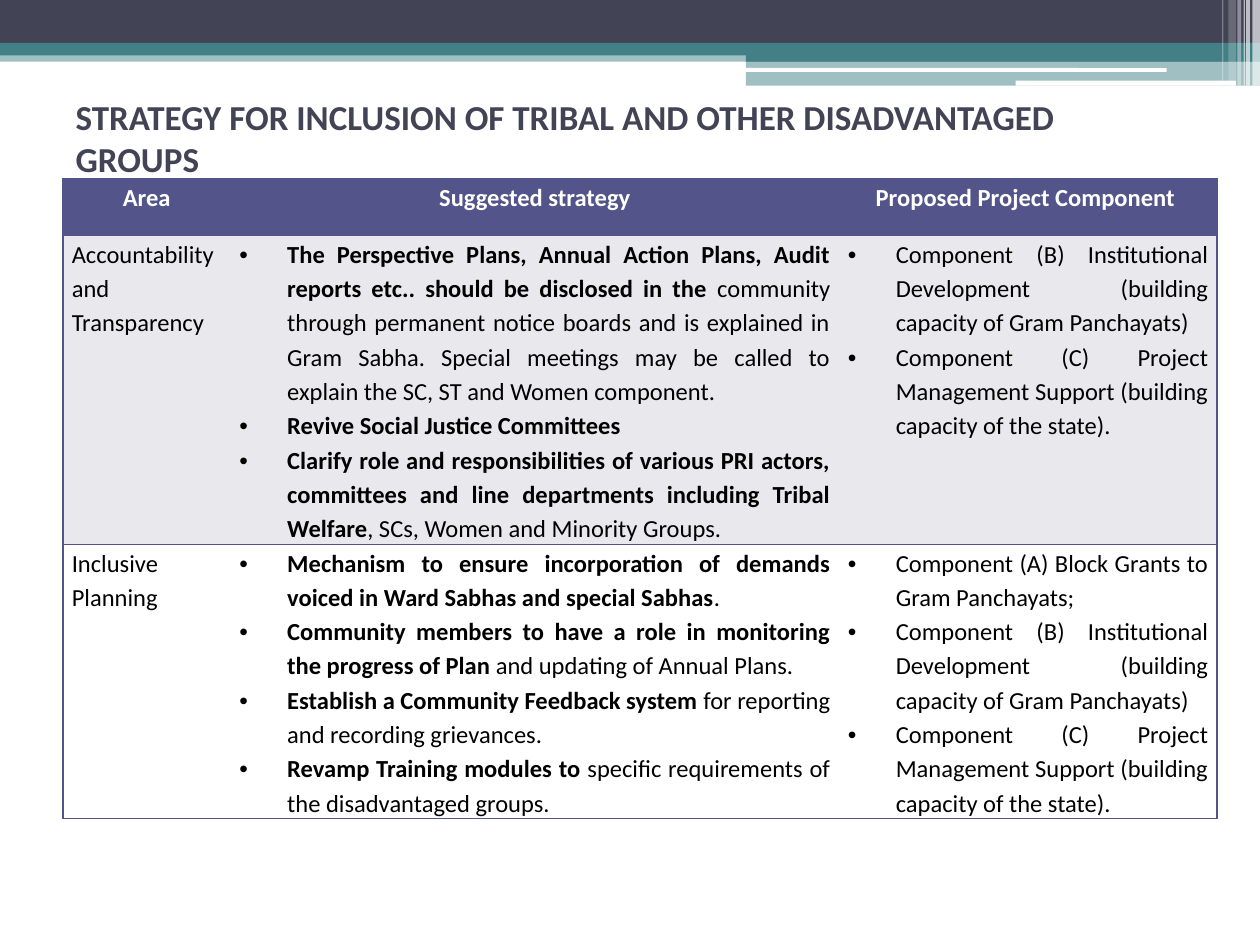
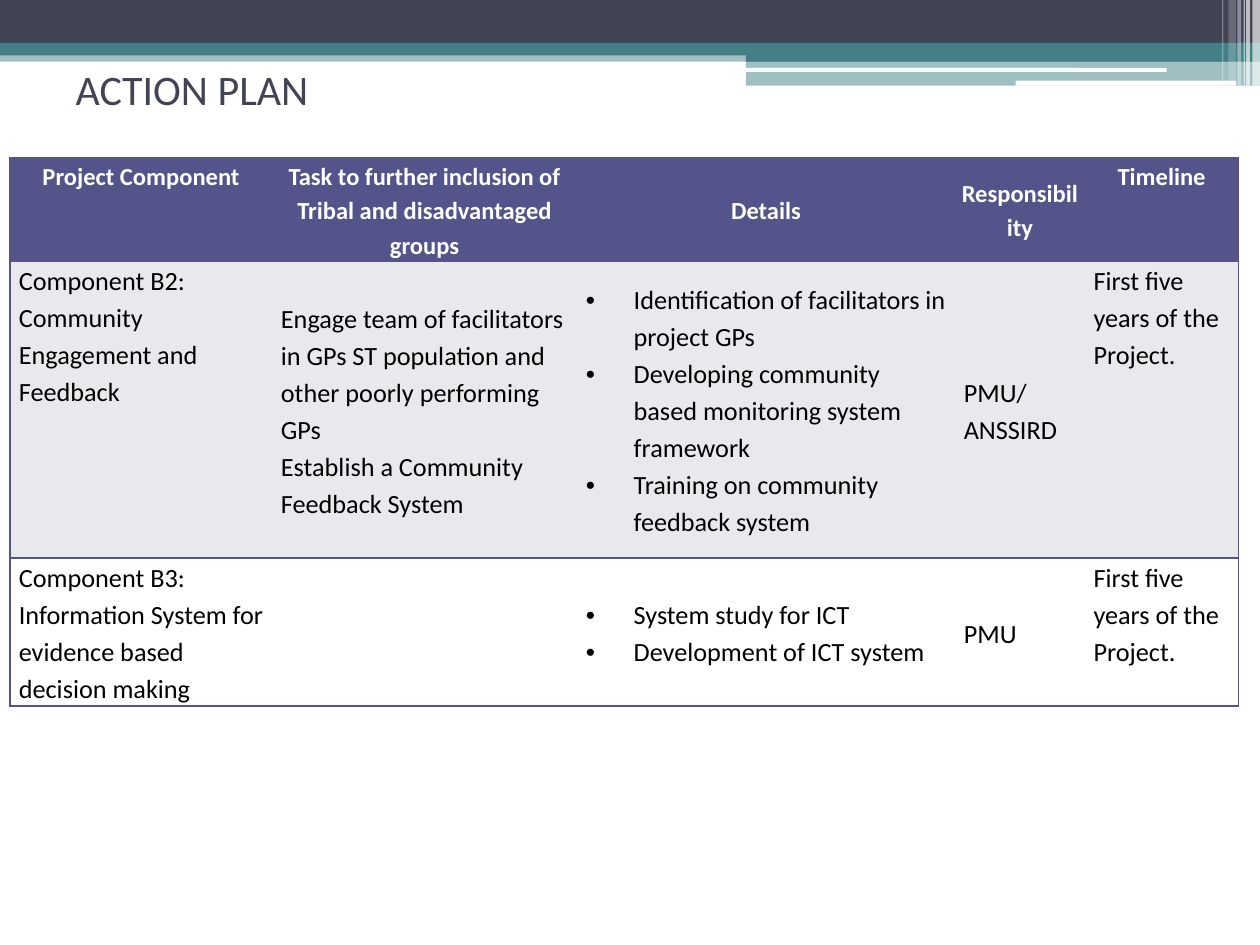
"""Build two slides on inclusion strategy and action plan."""
from lxml import etree
from pptx import Presentation
from pptx.dml.color import RGBColor
from pptx.enum.shapes import MSO_SHAPE
from pptx.enum.text import MSO_ANCHOR, MSO_AUTO_SIZE, PP_ALIGN
from pptx.oxml.ns import qn
from pptx.util import Inches, Pt

RECT, ROUND = MSO_SHAPE.RECTANGLE, MSO_SHAPE.ROUNDED_RECTANGLE
TOP, MIDDLE = MSO_ANCHOR.TOP, MSO_ANCHOR.MIDDLE
LEFT, CENTER, JUSTIFY = PP_ALIGN.LEFT, PP_ALIGN.CENTER, PP_ALIGN.JUSTIFY
FIXED = MSO_AUTO_SIZE.NONE

FONT = "Calibri"
NAVY = RGBColor(0x42, 0x44, 0x56)
TEAL = RGBColor(0x43, 0x80, 0x86)
PURPLE = RGBColor(0x53, 0x54, 0x8A)
GREY = RGBColor(0xE9, 0xE9, 0xED)
WHITE = RGBColor(0xFF, 0xFF, 0xFF)
BLACK = RGBColor(0, 0, 0)
INDENT = Inches(0.38)

BANDS = [
    (0, 0.4, 10, 0.09, TEAL, 50),
    (0, 0, 10, 0.34, NAVY, 100),
    (0, 0.34, 10, 0.1, TEAL, 100),
    (5.92, 0.39, 4.08, 0.1, TEAL, 100),
    (5.92, 0.48, 4.08, 0.2, TEAL, 50),
]
BARS = [(5.91, 0.54, 3.35, 0.03), (8.06, 0.64, 1.75, 0.04)]
STRIPES = [
    (9.94, 0.06, 0.68, 65),
    (9.89, 0.03, 0.68, 65),
    (9.87, 0.01, 0.68, 60),
    (9.82, 0.03, 0.68, 40),
    (9.75, 0.06, 0.64, 20),
    (9.7, 0.01, 0.64, 30),
]

PART_B = "Component (B) Institutional Development (building capacity of Gram Panchayats) "
PART_C = "Component (C) Project Management Support (building capacity of the state)."
SPAN = "First five years of the Project."

STRATEGY = [
    [["Area"], ["Suggested strategy"], ["Proposed Project Component "]],
    [
        ["Accountability and Transparency "],
        [
            ("The Perspective Plans, Annual Action Plans, Audit reports etc.. "
             "should be disclosed in the ",
             "community through permanent notice boards and is explained in Gram Sabha. "
             "Special meetings may be called to explain the SC, ST and Women component."),
            ("Revive Social Justice Committees", ""),
            ("Clarify role and responsibilities of various PRI actors, committees "
             "and line departments including Tribal Welfare",
             ", SCs, Women and Minority Groups."),
        ],
        [PART_B, PART_C],
    ],
    [
        ["Inclusive Planning"],
        [
            ("Mechanism to ensure incorporation of demands voiced in Ward Sabhas "
             "and special Sabhas", ". "),
            ("Community members to have a role in monitoring the progress of Plan ",
             "and updating of Annual Plans."),
            ("Establish a Community Feedback system ",
             "for reporting and recording grievances."),
            ("Revamp Training modules to ",
             "specific requirements of the disadvantaged groups."),
        ],
        ["Component (A) Block Grants to Gram Panchayats; ", PART_B, PART_C],
    ],
]

ACTION = [
    [
        ["Project Component"],
        ["Task to further inclusion of Tribal and disadvantaged groups"],
        ["Details"],
        ["Responsibility"],
        ["Timeline"],
    ],
    [
        ["Component B2: Community Engagement and Feedback"],
        ["Engage team of facilitators in GPs ST population and other poorly performing GPs",
         "Establish a Community Feedback System"],
        ["Identification of facilitators in project GPs",
         "Developing community based monitoring system framework",
         "Training on community feedback system"],
        ["PMU/ ANSSIRD"],
        [SPAN],
    ],
    [
        ["Component B3: Information System for evidence based decision making"],
        [],
        ["System study for ICT", "Development of ICT system"],
        ["PMU"],
        [SPAN],
    ],
]


def add_band(slide, kind, box, color, alpha=100):
    """Move a plain filled shape from the slide to its master."""
    shape = slide.shapes.add_shape(kind, *map(Inches, box))
    shape.shadow.inherit = False
    shape.fill.solid()
    shape.fill.fore_color.rgb = color
    shape.line.fill.background()
    if alpha < 100:
        tint = shape.element.spPr.find(".//" + qn("a:srgbClr"))
        etree.SubElement(tint, qn("a:alpha"), val=str(alpha * 1000))
    slide.slide_layout.slide_master.shapes.element.append(shape.element)


def add_frame(slide):
    """Draw the shared header bands, bars and stripes."""
    for *box, color, alpha in BANDS:
        add_band(slide, RECT, box, color, alpha)
    for box in BARS:
        add_band(slide, ROUND, box, WHITE)
    for left, width, height, alpha in STRIPES:
        add_band(slide, RECT, (left, 0, width, height), WHITE, alpha)


def add_run(para, text, size, color, bold=False):
    """Add one run in the shared font."""
    run = para.add_run()
    run.text = text
    font = run.font
    font.name, font.size, font.bold = FONT, Pt(size), bold
    font.color.rgb = color


def set_title(slide, text, box, size, bold=False, anchor=MIDDLE, inset=0.05):
    """Place and format the title placeholder."""
    title = slide.shapes.title
    title.left, title.top, title.width, title.height = map(Inches, box)
    frame = title.text_frame
    frame.auto_size = FIXED
    frame.word_wrap = True
    frame.vertical_anchor = anchor
    frame.margin_top = Inches(inset)
    para = frame.paragraphs[0]
    para.alignment = LEFT
    add_run(para, text, size, NAVY, bold)


def set_edges(cell, first, last):
    """Rule a cell above and below, and at the outer sides of the table."""
    props = cell._tc.get_or_add_tcPr()
    for side, shown in (("L", first), ("R", last), ("T", True), ("B", True)):
        line = etree.SubElement(props, qn("a:ln" + side), w=str(Pt(1)))
        if shown:
            fill = etree.SubElement(line, qn("a:solidFill"))
            etree.SubElement(fill, qn("a:srgbClr"), val=str(PURPLE))
        else:
            etree.SubElement(line, qn("a:noFill"))


def set_bullet(para):
    """Give a paragraph a hanging bullet."""
    props = para._p.get_or_add_pPr()
    props.set("marL", str(INDENT))
    props.set("indent", str(-INDENT))
    etree.SubElement(props, qn("a:buFont"), typeface="Arial")
    etree.SubElement(props, qn("a:buChar"), char="•")


def fill_cell(cell, items, size, color, align, bullet, head):
    """Write the paragraphs of a cell, each plain or a bold and plain pair."""
    frame = cell.text_frame
    for num, item in enumerate(items):
        para = frame.add_paragraph() if num else frame.paragraphs[0]
        para.alignment = align
        para.line_spacing = 1.15
        if bullet:
            set_bullet(para)
        lead, rest = (item, "") if head else ("", item)
        if isinstance(item, tuple):
            lead, rest = item
        for text, bold in ((lead, True), (rest, False)):
            if text:
                add_run(para, text, size, color, bold)


def add_grid(slide, rows, spot, cols, heights, size, align, lists, inset, mids=()):
    """Add a table with a dark header row and one shaded body row."""
    shape = slide.shapes.add_table(
        len(rows), len(cols), *map(Inches, (*spot, sum(cols), sum(heights))))
    table = shape.table
    for col, width in zip(table.columns, cols):
        col.width = Inches(width)
    for row, height in zip(table.rows, heights):
        row.height = Inches(height)
    for r, row in enumerate(rows):
        head = r == 0
        for c, items in enumerate(row):
            cell = table.cell(r, c)
            set_edges(cell, c == 0, c == len(cols) - 1)
            cell.fill.solid()
            cell.fill.fore_color.rgb = (PURPLE, GREY, WHITE)[r]
            cell.margin_left = cell.margin_right = Inches(inset if head else 0.07)
            cell.margin_top = cell.margin_bottom = 0
            cell.vertical_anchor = MIDDLE if c in mids else TOP
            if head:
                fill_cell(cell, items, 14, WHITE, CENTER, False, True)
            else:
                fill_cell(cell, items, size, BLACK, align, c in lists, False)


def main():
    """Build and save the deck."""
    deck = Presentation()
    deck.slide_width, deck.slide_height = Inches(10), Inches(7.5)
    layout = deck.slide_layouts[5]

    slide = deck.slides.add_slide(layout)
    add_frame(slide)
    set_title(slide, "STRATEGY FOR INCLUSION OF TRIBAL AND OTHER DISADVANTAGED GROUPS",
              (0.5, 0.67, 9, 1.17), 20, True, TOP, 0.09)
    add_grid(slide, STRATEGY, (0.5, 1.42), (1.33, 4.83, 3), (0.45, 2.45, 2.17),
             14, JUSTIFY, {1, 2}, 0.06)

    slide = deck.slides.add_slide(layout)
    set_title(slide, "ACTION PLAN", (0.5, 0.08, 9, 1.25), 24)
    add_grid(slide, ACTION, (0.08, 1.25), (2.08, 2.42, 3, 1.03, 1.22),
             (0.82, 2.36, 1.17), 15, LEFT, {2}, 0.05, {1, 2, 3})

    deck.save("out.pptx")


if __name__ == "__main__":
    main()
